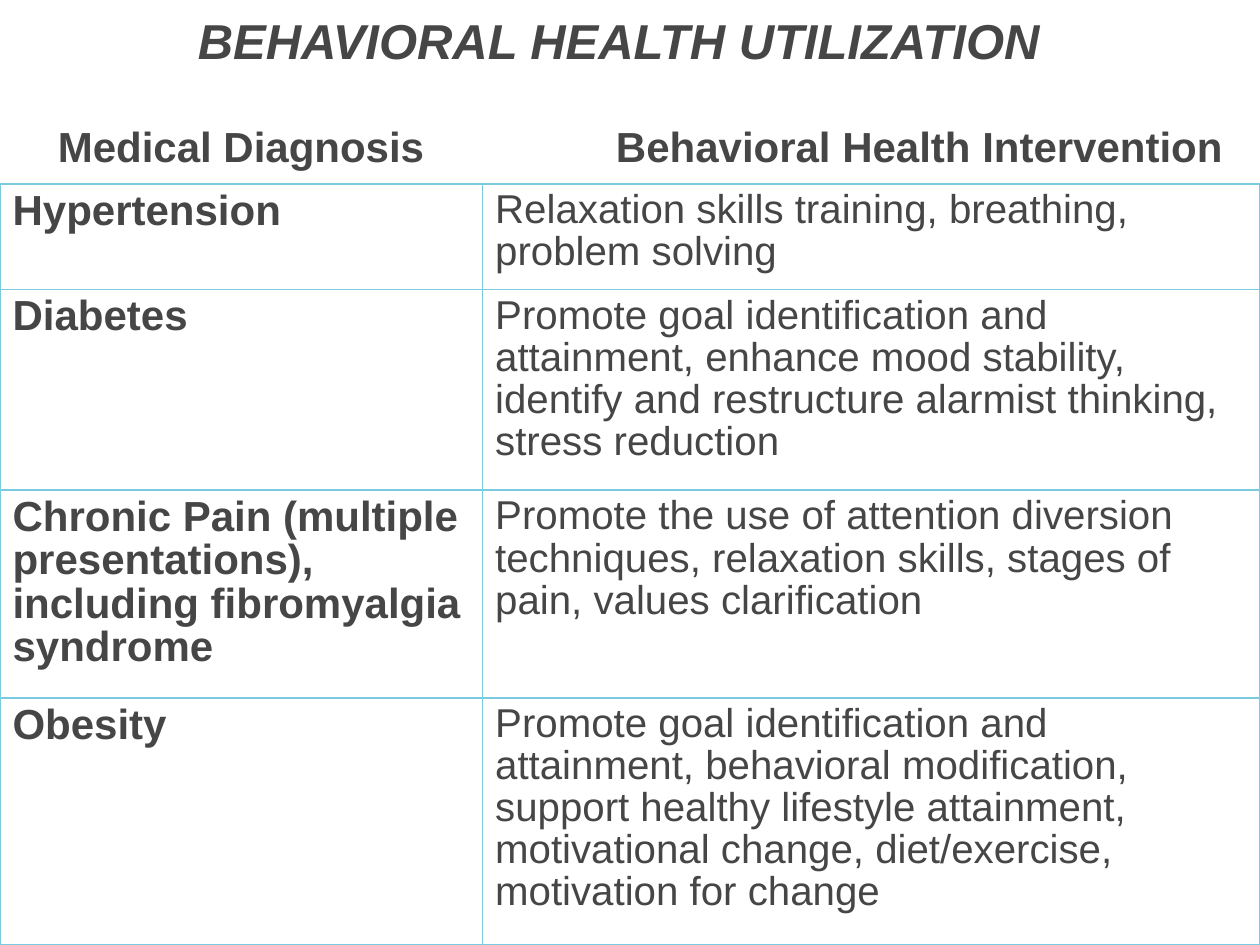
from lxml import etree
from pptx import Presentation
from pptx.dml.color import RGBColor
from pptx.enum.text import MSO_ANCHOR, MSO_AUTO_SIZE, PP_ALIGN
from pptx.oxml.ns import qn
from pptx.util import Inches, Pt

TOP = MSO_ANCHOR.TOP
CENTER = PP_ALIGN.CENTER
NO_AUTOFIT = MSO_AUTO_SIZE.NONE
TITLE_ONLY_LAYOUT = 5

FONT = "Arial"
TEXT_COLOR = "464646"
BORDER_COLOR = "7ACBE0"

INTERVENTIONS = [
    ("Hypertension",
     "Relaxation skills training, breathing, problem solving"),
    ("Diabetes",
     "Promote goal identification and attainment, enhance mood stability, "
     "identify and restructure alarmist thinking, stress reduction"),
    ("Chronic Pain (multiple presentations), including fibromyalgia syndrome",
     "Promote the use of attention diversion techniques, relaxation skills, "
     "stages of pain, values clarification"),
    ("Obesity",
     "Promote goal identification and attainment, behavioral modification, "
     "support healthy lifestyle attainment, motivational change, "
     "diet/exercise, motivation for change"),
]
COLUMN_WIDTHS = [3.83, 6.17]
ROW_HEIGHTS = [0.84, 1.59, 1.65, 1.96]


def rgb(color):
    return RGBColor.from_string(color)


def style_text(paragraph, size, bold=True, italic=False):
    font = paragraph.font
    font.name = FONT
    font.size = Pt(size)
    font.bold = bold
    font.italic = italic
    font.color.rgb = rgb(TEXT_COLOR)


def add_tab_stops(paragraph, positions):
    tab_list = etree.SubElement(paragraph._p.get_or_add_pPr(), qn("a:tabLst"))
    for position in positions:
        etree.SubElement(tab_list, qn("a:tab"), pos=str(Inches(position)), algn="l")


def add_cell_borders(cell, color, width):
    properties = cell._tc.get_or_add_tcPr()
    for side in ("lnL", "lnR", "lnT", "lnB"):
        line = etree.SubElement(properties, qn(f"a:{side}"), w=str(Pt(width)))
        fill = etree.SubElement(line, qn("a:solidFill"))
        etree.SubElement(fill, qn("a:srgbClr"), val=color)


def set_title(slide, text):
    title = slide.shapes.title
    title.left, title.top = Inches(0), Inches(-0.08)
    title.width, title.height = Inches(10), Inches(0.5)
    frame = title.text_frame
    frame.auto_size = NO_AUTOFIT
    frame.vertical_anchor = TOP
    frame.margin_top = Inches(0.16)
    frame.margin_bottom = Inches(0)
    frame.margin_right = Inches(0.28)
    frame.text = text
    heading = frame.paragraphs[0]
    heading.alignment = CENTER
    heading.line_spacing = 1.0
    style_text(heading, 28, italic=True)


def add_column_headings(slide, headings):
    box = slide.shapes.add_textbox(
        Inches(-0.08), Inches(0.91), Inches(10.02), Inches(0.5))
    box.text_frame.word_wrap = True
    line = box.text_frame.paragraphs[0]
    line.text = "".join("\t" + heading for heading in headings)
    add_tab_stops(line, [0.44, 4.87])
    style_text(line, 24)


def fill_cell(cell, text, size, bold):
    cell.text = text
    cell.margin_left = cell.margin_right = Inches(0.1)
    cell.margin_top = cell.margin_bottom = Inches(0.05)
    paragraph = cell.text_frame.paragraphs[0]
    paragraph.line_spacing = 0.93
    style_text(paragraph, size, bold)
    add_cell_borders(cell, BORDER_COLOR, 1)
    cell.fill.background()


def add_intervention_table(slide):
    table = slide.shapes.add_table(
        len(INTERVENTIONS), len(COLUMN_WIDTHS), Inches(0), Inches(1.46),
        Inches(sum(COLUMN_WIDTHS)), Inches(sum(ROW_HEIGHTS))).table
    table.first_row = False
    table.horz_banding = False
    for column, width in zip(table.columns, COLUMN_WIDTHS):
        column.width = Inches(width)
    for row, height, (diagnosis, intervention) in zip(
            table.rows, ROW_HEIGHTS, INTERVENTIONS):
        row.height = Inches(height)
        fill_cell(row.cells[0], diagnosis, 24, bold=True)
        fill_cell(row.cells[1], intervention, 23, bold=False)


def main():
    presentation = Presentation()
    presentation.slide_width = Inches(10)
    presentation.slide_height = Inches(7.5)
    slide = presentation.slides.add_slide(
        presentation.slide_layouts[TITLE_ONLY_LAYOUT])
    add_intervention_table(slide)
    set_title(slide, "BEHAVIORAL HEALTH UTILIZATION")
    add_column_headings(
        slide, ["Medical Diagnosis", "Behavioral Health Intervention"])
    presentation.save("out.pptx")


if __name__ == "__main__":
    main()
